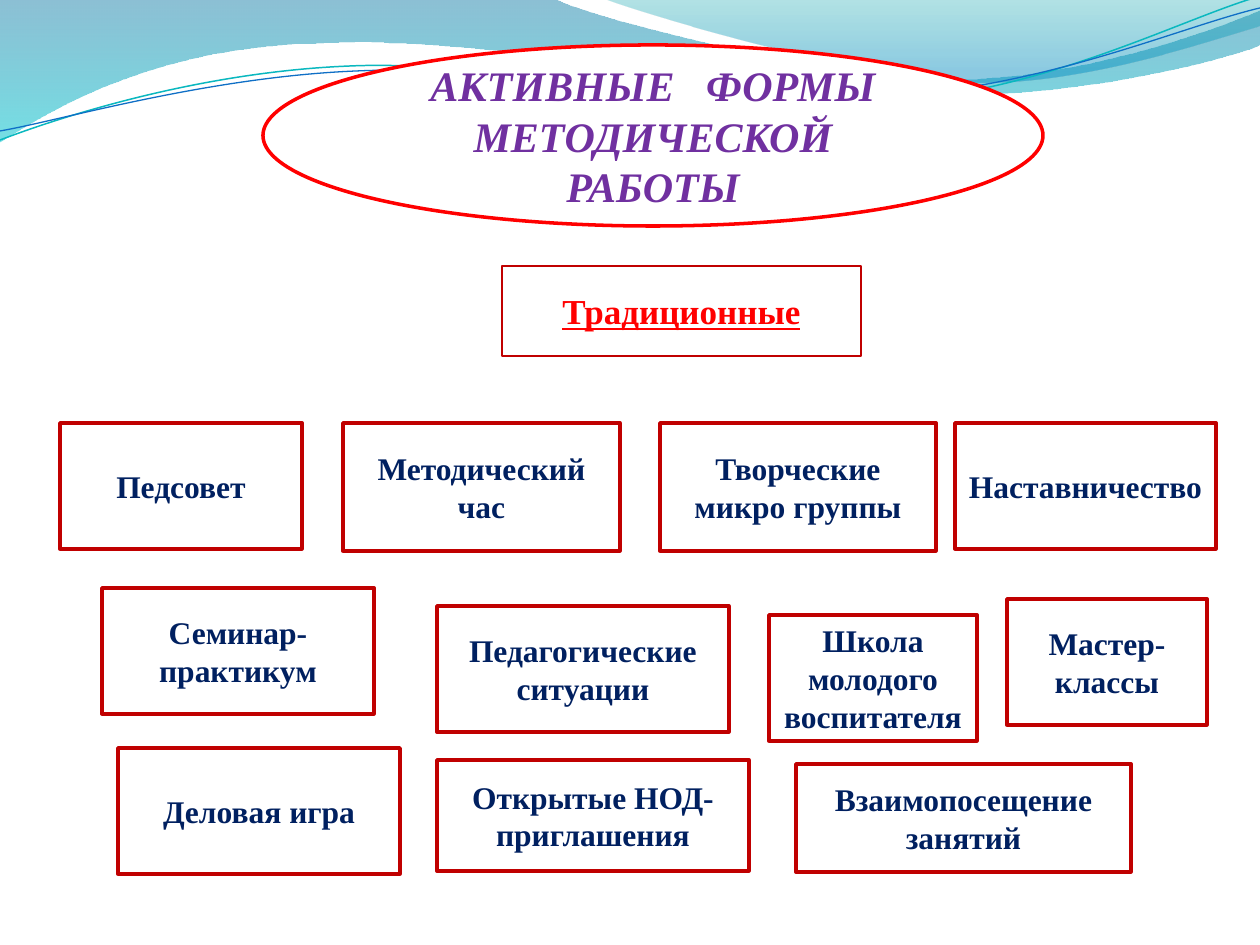
"""Build a slide on the traditional forms of methodical work in a kindergarten."""
from dataclasses import dataclass

from lxml import etree
from pptx import Presentation
from pptx.dml.color import RGBColor
from pptx.enum.shapes import MSO_SHAPE
from pptx.enum.text import MSO_ANCHOR, PP_ALIGN
from pptx.oxml.ns import qn
from pptx.util import Emu, Pt

OVAL = MSO_SHAPE.OVAL
RECTANGLE = MSO_SHAPE.RECTANGLE
MIDDLE = MSO_ANCHOR.MIDDLE
CENTER = PP_ALIGN.CENTER
PX = 914400 / 126


@dataclass(frozen=True)
class Theme:
    font: str = "Times New Roman"
    paper: str = "FFFFFF"
    title: str = "7030A0"
    accent: str = "FF0000"
    border: str = "C00000"
    body: str = "002060"
    title_size: int = 24
    heading_size: int = 20
    body_size: int = 18
    wide_gap: int = 12


THEME = Theme()


def add_box(shapes, outline, bounds, size, color, border, border_width):
    box = shapes.add_shape(outline, *(Emu(round(length * PX)) for length in bounds))
    box.shadow.inherit = False
    box.fill.solid()
    box.fill.fore_color.rgb = RGBColor.from_string(THEME.paper)
    box.line.color.rgb = RGBColor.from_string(border)
    box.line.width = Pt(border_width)
    frame = box.text_frame
    frame.word_wrap = True
    frame.vertical_anchor = MIDDLE
    paragraph = frame.paragraphs[0]
    paragraph.alignment = CENTER
    paragraph.font.name = THEME.font
    paragraph.font.size = Pt(size)
    paragraph.font.bold = True
    paragraph.font.color.rgb = RGBColor.from_string(color)
    return paragraph


def draw_wave(shapes, start, segments, closed):
    corners = [pair for segment in segments for pair in zip(segment[::2], segment[1::2])]
    scaled = [(round(x * PX), round(y * PX)) for x, y in [start, *corners]]
    builder = shapes.build_freeform(*scaled[0])
    builder.add_line_segments(scaled[1:], close=closed)
    wave = builder.convert_to_shape()
    wave.shadow.inherit = False
    steps = iter(list(wave._element.iter(qn("a:lnTo"))))
    for segment in segments:
        step = next(steps)
        if len(segment) == 6:
            step.addprevious(curve := etree.Element(qn("a:cubicBezTo")))
            for handle in (step, next(steps), next(steps)):
                curve.append(handle[0])
                handle.getparent().remove(handle)
    return wave


prs = Presentation()
prs.slide_width = Emu(round(1260 * PX))
prs.slide_height = Emu(round(945 * PX))
slide = prs.slides.add_slide(prs.slide_layouts[6])
shapes = slide.shapes

ribbons = [
    ((0, 0), [(554, -1), (600, 21, 837, 79, 955, 79), (1075, 79, 1207, 33, 1260, 11),
              (1261, 45), (1239, 55, 1096, 96, 940, 95), (784, 95, 481, 35, 324, 43),
              (163, 45, 58, 105, -1, 142), (0, 0)],
     [(0, "0074A1", 45), (1, "00C6CF", 55)]),
    ((604, -1), [(641, 14, 859, 78, 969, 82), (1079, 86, 1211, 40, 1260, 26),
                 (1260, 0), (604, -1)],
     [(0, "00A1A9", 30), (0.8, "008BBF", 45)]),
]
for start, segments, stops in ribbons:
    ribbon = draw_wave(shapes, start, segments, True)
    ribbon.line.fill.background()
    ribbon.fill.gradient()
    ribbon.fill.gradient_angle = 270
    for stop, (position, color, _) in zip(ribbon.fill.gradient_stops, stops):
        stop.position = position
        stop.color.rgb = RGBColor.from_string(color)
    tints = ribbon._element.spPr.iter(qn("a:srgbClr"))
    for tint, (_, _, opacity) in zip(tints, stops):
        etree.SubElement(tint, qn("a:alpha"), val=str(opacity * 1000))

strands = [
    ((0, 140), [(60, 117, 199, 72, 349, 66), (498, 59, 747, 112, 898, 101),
                (1050, 89, 1182, 19, 1257, -3)], "0AB8BF", 0.85),
    ((0, 131), [(59, 121, 207, 77, 357, 71), (508, 64, 752, 106, 903, 95),
                (1053, 84, 1184, 26, 1260, 8)], "0F6FC6", 0.75),
]
for start, segments, color, width in strands:
    strand = draw_wave(shapes, start, segments, False)
    strand.fill.background()
    strand.line.color.rgb = RGBColor.from_string(color)
    strand.line.width = Pt(width)

heading = add_box(shapes, OVAL, (263, 45, 780, 181), THEME.title_size,
                  THEME.title, THEME.accent, 2)
heading.font.italic = True
for words in ("АКТИВНЫЕ", " ", "ФОРМЫ МЕТОДИЧЕСКОЙ", " ", "РАБОТЫ"):
    part = heading.add_run()
    part.text = words
    if words == " ":
        part._r.get_or_add_rPr().set("spc", str(THEME.wide_gap * 100))

group = add_box(shapes, RECTANGLE, (502, 266, 359, 90), THEME.heading_size,
                THEME.accent, THEME.border, 1.5)
group.text = "Традиционные"
group.font.underline = True

forms = [
    ("Семинар-практикум", 102, 588, 272, 126),
    ("Педагогические ситуации", 437, 606, 292, 126),
    ("Школа молодого воспитателя", 769, 615, 208, 126),
    ("Методический час", 343, 423, 277, 128),
    ("Творческие микро группы", 660, 423, 276, 128),
    ("Открытые НОД-приглашения", 437, 760, 312, 111),
    ("Деловая игра", 118, 748, 282, 126),
    ("Наставничество", 955, 423, 261, 126),
    ("Педсовет", 60, 423, 242, 126),
    ("Мастер-классы", 1007, 599, 200, 126),
    ("Взаимопосещение занятий", 796, 764, 335, 108),
]
for name, *bounds in forms:
    form = add_box(shapes, RECTANGLE, bounds, THEME.body_size,
                   THEME.body, THEME.border, 2)
    form.text = name

prs.save("out.pptx")
